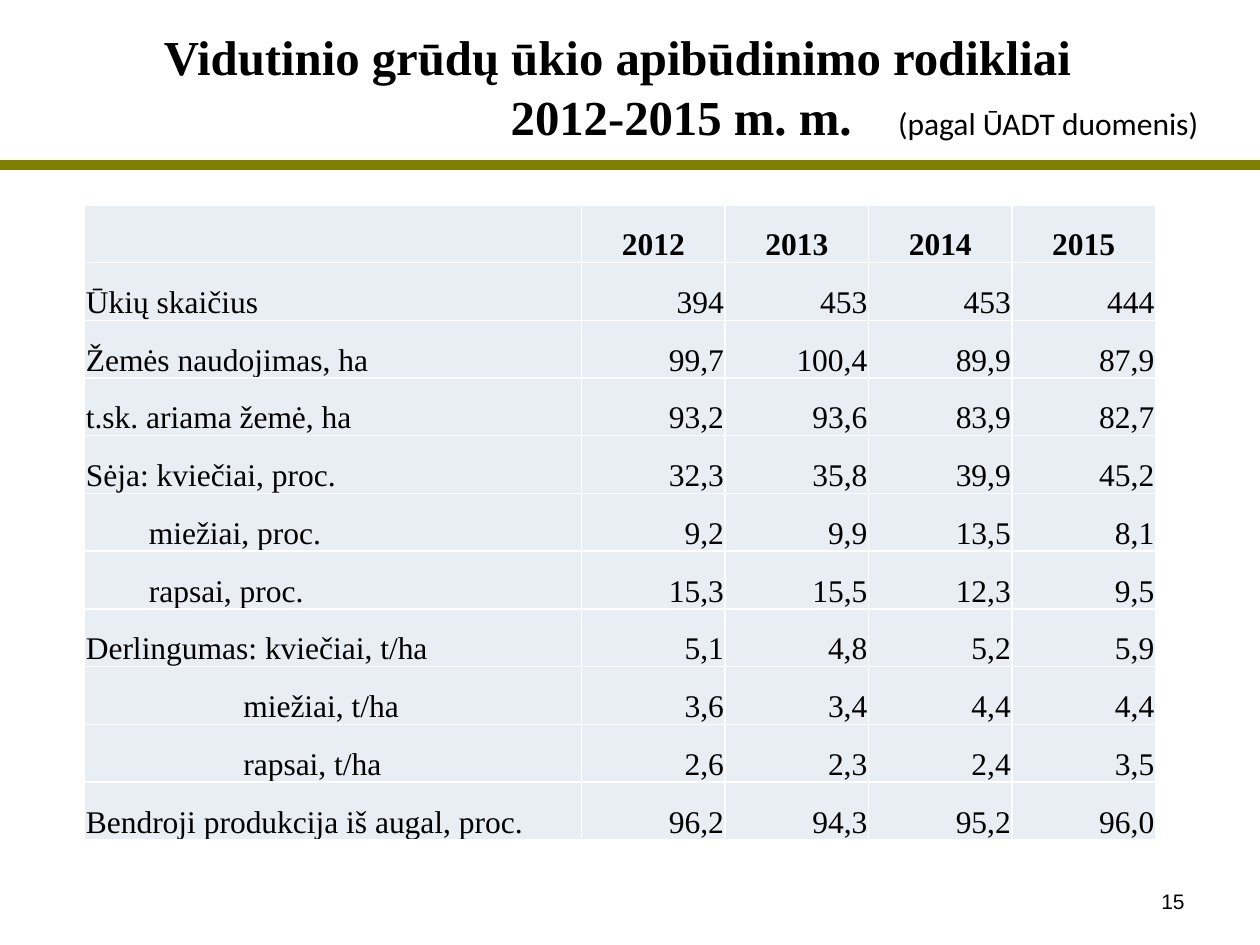
from lxml.etree import SubElement
from pptx import Presentation
from pptx.dml.color import RGBColor
from pptx.enum.shapes import MSO_CONNECTOR
from pptx.enum.text import MSO_ANCHOR, MSO_AUTO_SIZE, PP_ALIGN
from pptx.oxml.ns import qn
from pptx.util import Pt

COLORS = {"text": "000000", "rule": "808000", "cell": "E9EDF4", "border": "FFFFFF"}
SERIF = "Times New Roman"
SLIDE_W, SLIDE_H = 720, 540
YEARS = ["2012", "2013", "2014", "2015"]
# Label, left indent in points, one value per year
INDICATORS = [
    ("Ūkių skaičius", 0, ["394", "453", "453", "444"]),
    ("Žemės naudojimas, ha", 0, ["99,7", "100,4", "89,9", "87,9"]),
    ("t.sk. ariama žemė, ha", 0, ["93,2", "93,6", "83,9", "82,7"]),
    ("Sėja: kviečiai, proc.", 0, ["32,3", "35,8", "39,9", "45,2"]),
    ("miežiai, proc.", 36, ["9,2", "9,9", "13,5", "8,1"]),
    ("rapsai, proc.", 36, ["15,3", "15,5", "12,3", "9,5"]),
    ("Derlingumas: kviečiai, t/ha", 0, ["5,1", "4,8", "5,2", "5,9"]),
    ("miežiai, t/ha", 90, ["3,6", "3,4", "4,4", "4,4"]),
    ("rapsai, t/ha", 90, ["2,6", "2,3", "2,4", "3,5"]),
    ("Bendroji produkcija iš augal, proc.", 0, ["96,2", "94,3", "95,2", "96,0"]),
]


def color(name):
    return RGBColor.from_string(COLORS[name])


def write(paragraph, text, size=18, font=SERIF, bold=False, align=None, indent=0, tracking=0):
    """Append a formatted run; align and indent apply to its whole paragraph."""
    run = paragraph.add_run()
    run.text = text
    run.font.size = Pt(size)
    run.font.name = font
    run.font.bold = bold
    run.font.color.rgb = color("text")
    if align is not None:
        paragraph.alignment = align
    if indent:
        properties = paragraph._p.get_or_add_pPr()
        properties.set("marL", str(Pt(indent)))
        properties.set("indent", "0")
    if tracking:
        run._r.get_or_add_rPr().set("spc", str(tracking * 100))


def place_title(slide, left, top, width, height):
    title = slide.shapes.title
    title.left, title.top, title.width, title.height = map(Pt, (left, top, width, height))
    frame = title.text_frame
    frame.auto_size = MSO_AUTO_SIZE.NONE
    frame.vertical_anchor = MSO_ANCHOR.MIDDLE
    heading = frame.paragraphs[0]
    write(heading, "Vidutinio grūdų ūkio apibūdinimo rodikliai", size=27.9, bold=True,
          align=PP_ALIGN.CENTER, indent=-0)
    period = frame.add_paragraph()
    write(period, "2012-2015 m. m.", size=27.9, bold=True, align=PP_ALIGN.CENTER, indent=271)
    write(period, " ", size=28.8, font="Calibri", bold=True, tracking=20)
    write(period, "(pagal ŪADT duomenis)", font="Calibri")
    for paragraph in frame.paragraphs:
        paragraph.space_before = Pt(0)


def place_rule(slide, left, top, width):
    rule = slide.shapes.add_connector(
        MSO_CONNECTOR.STRAIGHT, Pt(left), Pt(top), Pt(left + width), Pt(top))
    rule.line.color.rgb = color("rule")
    rule.line.width = Pt(6)
    SubElement(rule._element.spPr, qn("a:effectLst"))


def add_borders(cell):
    properties = cell._tc.get_or_add_tcPr()
    for position, side in enumerate(("a:lnL", "a:lnR", "a:lnT", "a:lnB")):
        border = properties.makeelement(qn(side), {"w": str(Pt(1))})
        fill = SubElement(border, qn("a:solidFill"))
        SubElement(fill, qn("a:srgbClr"), val=COLORS["border"])
        properties.insert(position, border)


def format_cell(cell):
    cell.margin_left = cell.margin_right = cell.margin_top = Pt(0.7)
    cell.margin_bottom = Pt(0)
    cell.vertical_anchor = MSO_ANCHOR.BOTTOM
    cell.fill.solid()
    cell.fill.fore_color.rgb = color("cell")
    add_borders(cell)


def place_indicators(slide, left, top, width, height, year_width=82):
    row_count, column_count = len(INDICATORS) + 1, len(YEARS) + 1
    table = slide.shapes.add_table(
        row_count, column_count, Pt(left), Pt(top), Pt(width), Pt(height)).table
    table.first_row = table.horz_banding = False
    label_width = width - len(YEARS) * year_width
    for column, column_width in zip(table.columns, [label_width] + [year_width] * len(YEARS)):
        column.width = Pt(column_width)
    for row in table.rows:
        row.height = Pt(height / row_count)
    for cell in table.iter_cells():
        format_cell(cell)

    def paragraph_at(row, column):
        return table.cell(row, column).text_frame.paragraphs[0]

    for column, year in enumerate(YEARS, 1):
        write(paragraph_at(0, column), year, bold=True, align=PP_ALIGN.CENTER)
    for row, (label, indent, values) in enumerate(INDICATORS, 1):
        write(paragraph_at(row, 0), label, indent=indent)
        for column, value in enumerate(values, 1):
            write(paragraph_at(row, column), value, align=PP_ALIGN.RIGHT)


def place_page_number(slide, left, top, width, height):
    frame = slide.shapes.add_textbox(Pt(left), Pt(top), Pt(width), Pt(height)).text_frame
    frame.word_wrap = True
    frame.vertical_anchor = MSO_ANCHOR.MIDDLE
    write(frame.paragraphs[0], "15", size=12, font="Arial", align=PP_ALIGN.RIGHT)


def main():
    deck = Presentation()
    deck.slide_width, deck.slide_height = Pt(SLIDE_W), Pt(SLIDE_H)
    slide = deck.slides.add_slide(deck.slide_layouts[5])
    place_title(slide, 0, 9.4, 705.6, 79.2)
    place_rule(slide, 0, 94.3, SLIDE_W)
    place_page_number(slide, 516, 500.4, 168, 28.8)
    place_indicators(slide, 48.4, 117, 612, 363)
    deck.save("out.pptx")


if __name__ == "__main__":
    main()
